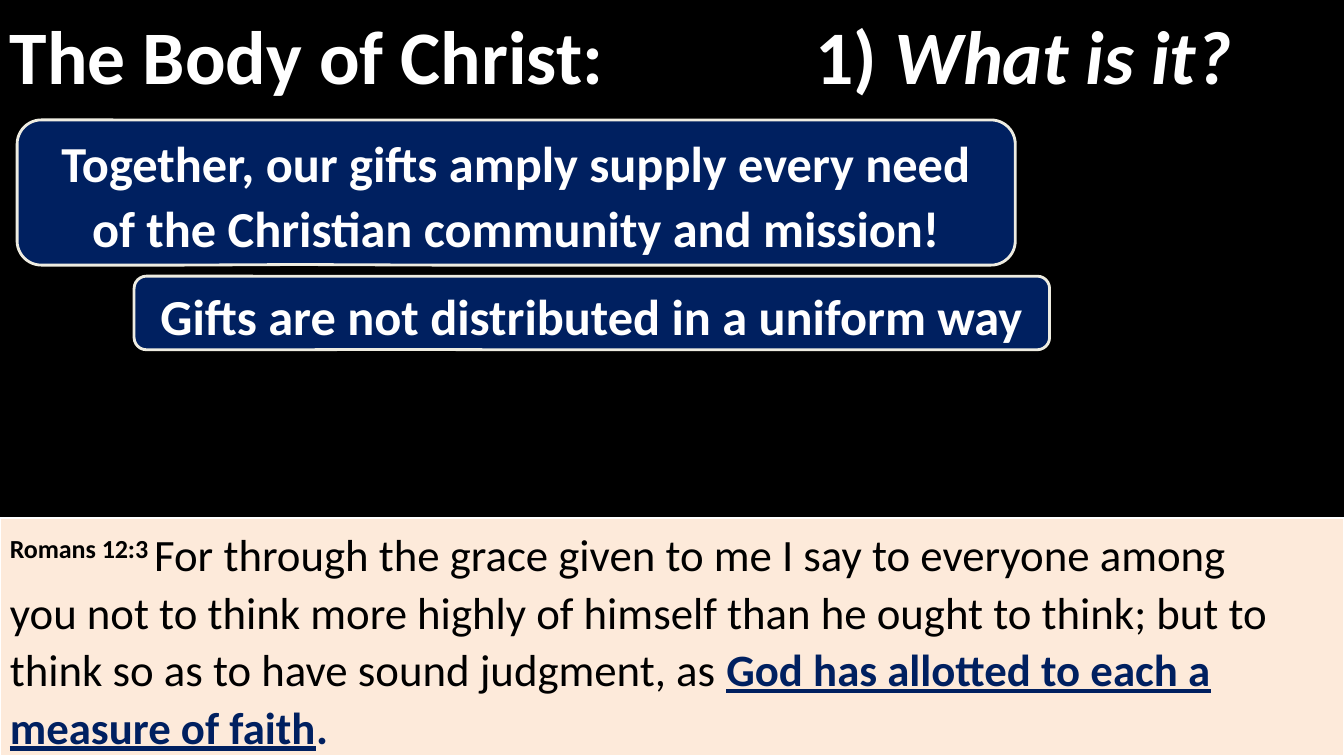
from pptx import Presentation
from pptx.dml.color import RGBColor
from pptx.enum.shapes import MSO_SHAPE
from pptx.enum.text import MSO_ANCHOR, PP_ALIGN
from pptx.oxml import parse_xml
from pptx.oxml.ns import nsdecls
from pptx.util import Inches, Pt

WIDE, HIGH = 13.33, 7.5
BLACK, WHITE, NAVY, PEACH, IVORY = "000000", "FFFFFF", "002060", "FDEADA", "EEECE1"
TAB = 7.99

TITLE = [("The Body of Christ:\t1) ", {}), ("What is it?", {"italic": True})]
VERSE = [
    ("Romans 12:3 ", {"bold": True, "raised": 30}),
    ("For through the grace given to me I say to everyone among you not to think "
     "more highly of himself than he ought to think; but to think so as to have "
     "sound judgment, as ", {}),
    ("God has allotted to each a measure of faith",
     {"bold": True, "under": True, "color": NAVY}),
    (".", {"bold": True, "color": NAVY}),
]
POINTS = [
    ("Together, our gifts amply supply every need of the Christian community and mission!",
     (0.17, 1.19, 9.9, 1.44)),
    ("Gifts are not distributed in a uniform way", (1.33, 2.74, 9.08, 0.73)),
]
TAIL = (-0.219, 0.496, 0.167)


def paint(code):
    """Turn a hex string into a colour."""
    return RGBColor.from_string(code)


def panel(slide, kind, box, fill, line=None, width=0):
    """Add a filled shape with an optional outline."""
    shape = slide.shapes.add_shape(kind, *map(Inches, box))
    shape.shadow.inherit = False
    shape.fill.solid()
    shape.fill.fore_color.rgb = paint(fill)
    if line:
        shape.line.color.rgb = paint(line)
        shape.line.width = Pt(width)
    else:
        shape.line.fill.background()
    return shape


def write(para, text, size, color, bold=False, italic=False, under=False, raised=0):
    """Add one formatted run to a paragraph."""
    run = para.add_run()
    run.text = text
    font = run.font
    font.name, font.size = "Calibri", Pt(size)
    font.bold, font.italic, font.underline = bold, italic, under
    font.color.rgb = paint(color)
    if raised:
        run._r.get_or_add_rPr().set("baseline", str(raised * 1000))


def fill_in(shape, runs, anchor, align, space, left=0.1, right=0.1, **base):
    """Write a list of runs as the only paragraph of a shape."""
    frame = shape.text_frame
    frame.word_wrap = True
    frame.vertical_anchor = anchor
    frame.margin_left, frame.margin_right = Inches(left), Inches(right)
    para = frame.paragraphs[0]
    para.alignment, para.line_spacing = align, space
    for text, style in runs:
        write(para, text, **{**base, **style})
    return para


def main():
    """Build the slide and save it."""
    deck = Presentation()
    deck.slide_width, deck.slide_height = Inches(WIDE), Inches(HIGH)
    slide = deck.slides.add_slide(deck.slide_layouts[6])
    slide.background.fill.solid()
    slide.background.fill.fore_color.rgb = paint(BLACK)

    top = 5.14
    verse = panel(slide, MSO_SHAPE.RECTANGLE, (0, top, WIDE, HIGH - top), PEACH, WHITE, 1.5)
    fill_in(verse, VERSE, MSO_ANCHOR.TOP, PP_ALIGN.LEFT, 1.07, right=0.5,
            size=32, color=BLACK)

    title = panel(slide, MSO_SHAPE.RECTANGLE, (0, 0, WIDE, 1.07), BLACK)
    para = fill_in(title, TITLE, MSO_ANCHOR.MIDDLE, PP_ALIGN.LEFT, 1.0,
                   size=54, color=WHITE, bold=True)
    para._p.get_or_add_pPr().append(parse_xml(
        f'<a:tabLst {nsdecls("a")}><a:tab pos="{Inches(TAB)}" algn="l"/></a:tabLst>'))

    for text, box in POINTS:
        point = panel(slide, MSO_SHAPE.ROUNDED_RECTANGULAR_CALLOUT, box, NAVY, IVORY, 2)
        for spot, share in enumerate(TAIL):
            point.adjustments[spot] = share
        fill_in(point, [(text, {})], MSO_ANCHOR.MIDDLE, PP_ALIGN.CENTER, 1.07,
                left=0.15, right=0.15, size=36, color=WHITE, bold=True)

    deck.save("out.pptx")


if __name__ == "__main__":
    main()
